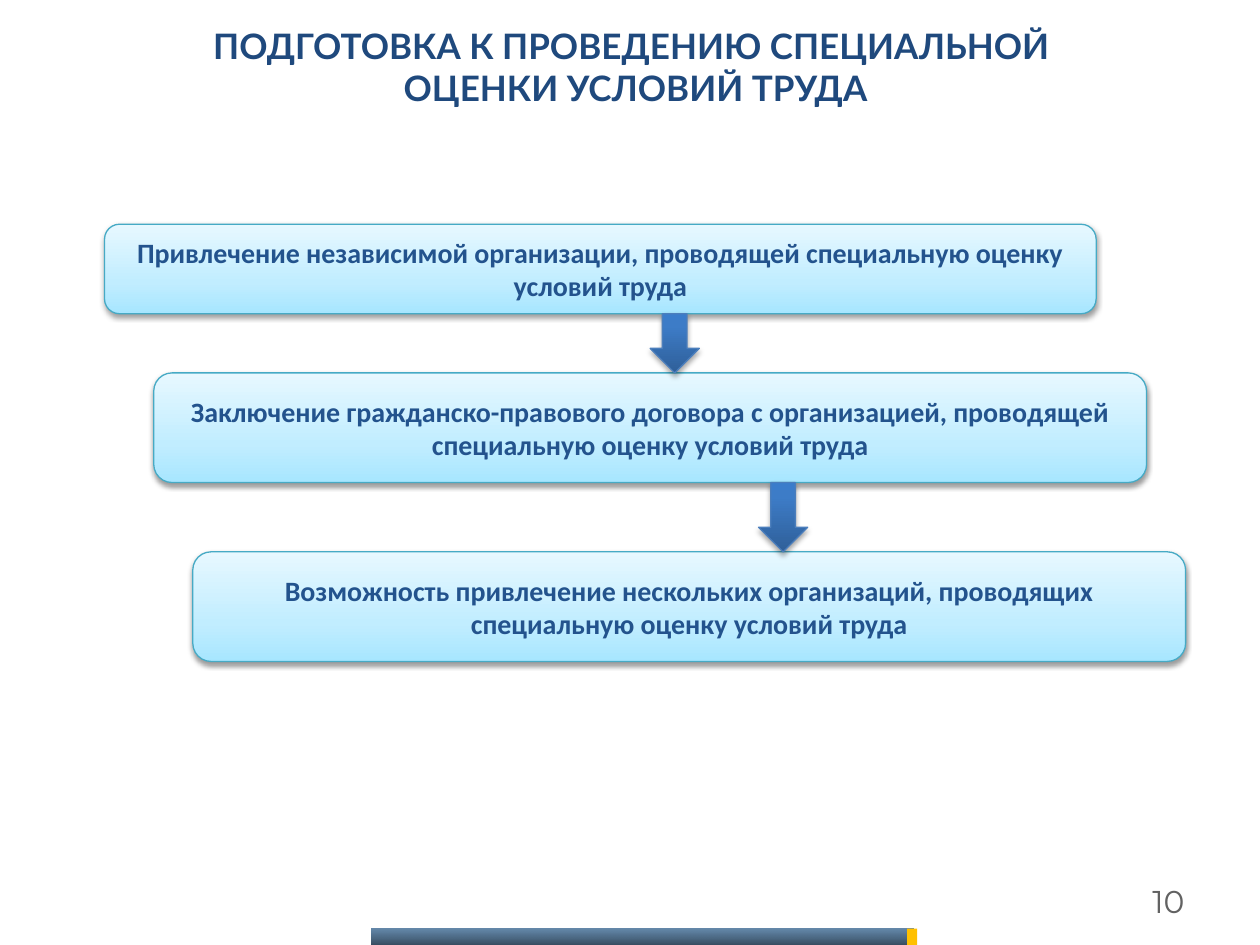
"""Build the slide on preparing the special assessment of working conditions."""
from dataclasses import dataclass

from lxml import etree
from pptx import Presentation
from pptx.dml.color import RGBColor
from pptx.enum.shapes import MSO_SHAPE
from pptx.enum.text import MSO_ANCHOR, PP_ALIGN
from pptx.oxml import parse_xml
from pptx.oxml.ns import nsdecls, qn
from pptx.shapes.autoshape import Shape
from pptx.slide import Slide
from pptx.util import Inches, Pt

RECT = MSO_SHAPE.RECTANGLE
ROUND = MSO_SHAPE.ROUNDED_RECTANGLE
ARROW = MSO_SHAPE.DOWN_ARROW
MIDDLE = MSO_ANCHOR.MIDDLE
CENTER = PP_ALIGN.CENTER
RIGHT = PP_ALIGN.RIGHT


@dataclass(frozen=True)
class Font:
    name: str
    size: int
    color: str
    bold: bool = True


@dataclass(frozen=True)
class Fade:
    stops: tuple[tuple[int, str, int], ...]
    angle: int


@dataclass(frozen=True)
class Look:
    fade: Fade
    line: str
    shade: int
    drop: float


@dataclass(frozen=True)
class Theme:
    title: Font = Font("Lato", 20, "1F497D")
    step: Font = Font("Calibri", 16, "23538D")
    number: Font = Font("Montserrat", 18, "626262", False)
    bar: Fade = Fade(((0, "003C73", 60), (100, "001C35", 80)), 90)
    accent: str = "FFC000"
    panel: Look = Look(
        Fade(((0, "A7E6FF", 100), (35, "C1EDFF", 100), (100, "E7F8FF", 100)), 270),
        "46AAC5", 38, 1.6)
    arrow: Look = Look(
        Fade(((0, "2F5F99", 100), (80, "3D7CC7", 100), (100, "3A7CCB", 100)), 270),
        "4B7EBC", 35, 1.8)
    edge: float = 0.75
    blur: float = 3.1


@dataclass(frozen=True)
class Box:
    left: float
    top: float
    width: float
    height: float

    @property
    def bottom(self) -> float:
        return self.top + self.height

    def place(self) -> tuple[int, ...]:
        return tuple(Inches(n) for n in (self.left, self.top, self.width, self.height))


@dataclass(frozen=True)
class Step:
    box: Box
    text: str


THEME = Theme()
TITLE = "ПОДГОТОВКА К ПРОВЕДЕНИЮ СПЕЦИАЛЬНОЙ \nОЦЕНКИ УСЛОВИЙ ТРУДА"
STEPS = (
    Step(Box(0.83, 1.78, 7.87, 0.71),
         "Привлечение независимой организации, проводящей специальную оценку условий труда"),
    Step(Box(1.22, 2.96, 7.88, 0.87),
         "Заключение гражданско-правового договора с организацией, "
         "проводящей специальную оценку условий труда"),
    Step(Box(1.53, 4.38, 7.88, 0.87),
         "Возможность привлечение нескольких организаций, "
         "проводящих специальную оценку условий труда"),
)
ARROWS = (5.16, 6.02)


def write(shape: Shape, text: str, font: Font, align: PP_ALIGN = CENTER) -> None:
    """Fill a shape with styled text."""
    frame = shape.text_frame
    frame.text = text
    frame.word_wrap = True
    frame.vertical_anchor = MIDDLE
    for para in frame.paragraphs:
        para.alignment = align
        for run in para.runs:
            run.font.name = font.name
            run.font.size = Pt(font.size)
            run.font.bold = font.bold
            run.font.color.rgb = RGBColor.from_string(font.color)


def label(slide: Slide, box: Box, text: str, font: Font, align: PP_ALIGN = CENTER) -> None:
    """Add a text box."""
    write(slide.shapes.add_textbox(*box.place()), text, font, align)


def plain(slide: Slide, kind: MSO_SHAPE, box: Box) -> Shape:
    """Add a shape without line or shadow."""
    shape = slide.shapes.add_shape(kind, *box.place())
    shape.shadow.inherit = False
    shape.line.fill.background()
    return shape


def blend(shape: Shape, fade: Fade) -> None:
    """Give a shape a linear gradient of any number of stops."""
    shape.fill.gradient()
    stops = "".join(
        f'<a:gs pos="{pos * 1000}"><a:srgbClr val="{color}">'
        f'<a:alpha val="{alpha * 1000}"/></a:srgbClr></a:gs>'
        for pos, color, alpha in fade.stops)
    props = shape.element.spPr
    props.replace(props.find(qn("a:gradFill")), parse_xml(
        f'<a:gradFill {nsdecls("a")} rotWithShape="1"><a:gsLst>{stops}</a:gsLst>'
        f'<a:lin ang="{fade.angle * 60000}" scaled="0"/></a:gradFill>'))


def raised(slide: Slide, kind: MSO_SHAPE, box: Box, look: Look) -> Shape:
    """Add an outlined gradient shape with a soft shadow below."""
    shape = plain(slide, kind, box)
    blend(shape, look.fade)
    shape.line.color.rgb = RGBColor.from_string(look.line)
    shape.line.width = Pt(THEME.edge)
    effects = shape.element.spPr.find(qn("a:effectLst"))
    shadow = etree.SubElement(
        effects, qn("a:outerShdw"), blurRad=str(Pt(THEME.blur)),
        dist=str(Pt(look.drop)), dir="5400000", rotWithShape="0")
    color = etree.SubElement(shadow, qn("a:srgbClr"), val="000000")
    etree.SubElement(color, qn("a:alpha"), val=str(look.shade * 1000))
    return shape


def main() -> None:
    """Draw and save the slide."""
    deck = Presentation()
    deck.slide_width, deck.slide_height = Inches(10), Inches(7.5)
    slide = deck.slides.add_slide(deck.slide_layouts[6])
    label(slide, Box(8.94, 6.95, 0.56, 0.4), "10", THEME.number, RIGHT)
    label(slide, Box(0.2, 0.21, 9.69, 0.63), TITLE, THEME.title)
    blend(plain(slide, RECT, Box(2.95, 7.37, 4.3, 0.13)), THEME.bar)
    accent = plain(slide, RECT, Box(7.2, 7.37, 0.08, 0.13))
    accent.fill.solid()
    accent.fill.fore_color.rgb = RGBColor.from_string(THEME.accent)
    for step in STEPS:
        write(raised(slide, ROUND, step.box, THEME.panel), step.text, THEME.step)
    for left, above, below in zip(ARROWS, STEPS, STEPS[1:]):
        start = above.box.bottom
        raised(slide, ARROW, Box(left, start, 0.39, below.box.top - start), THEME.arrow)
    deck.save("out.pptx")


if __name__ == "__main__":
    main()
